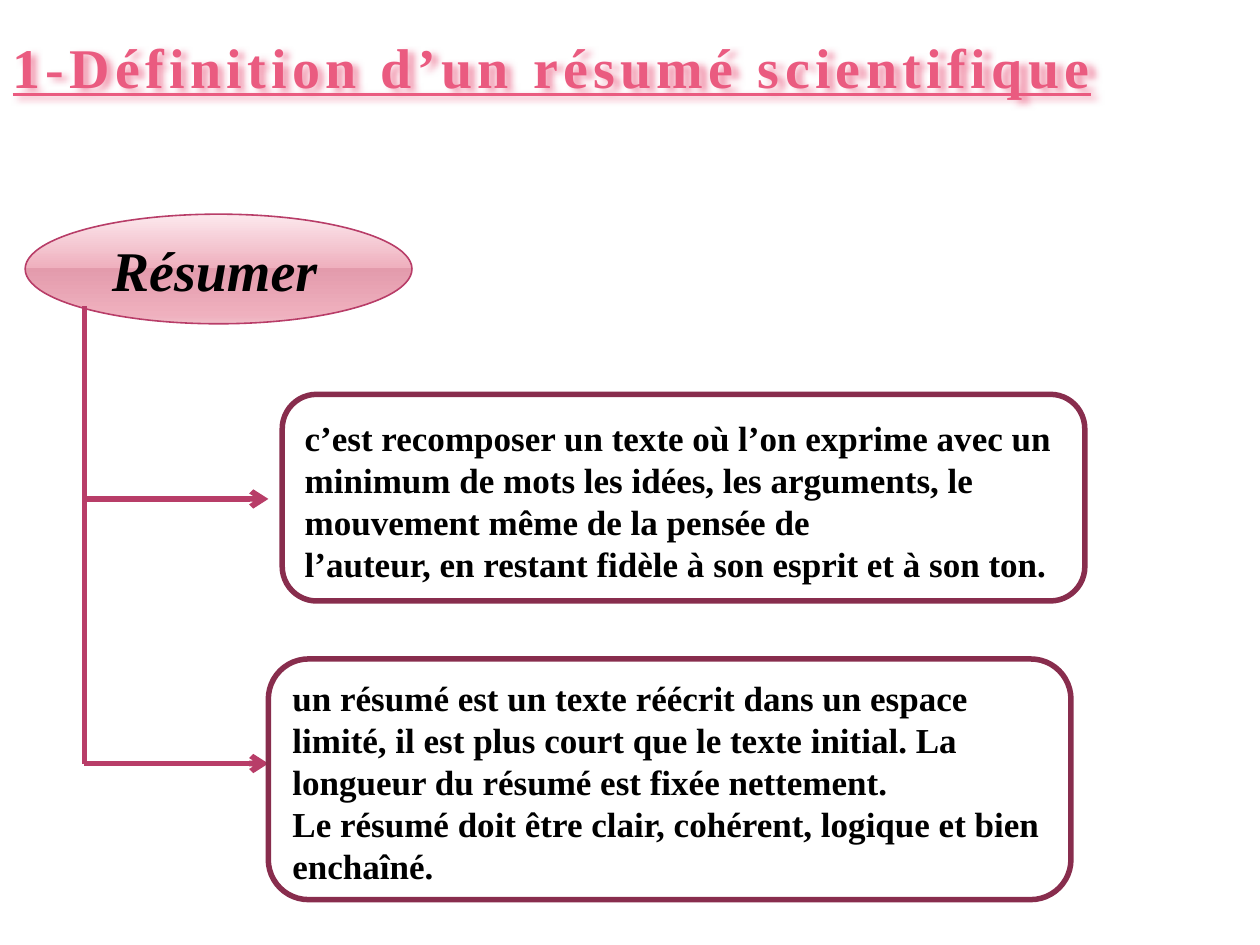
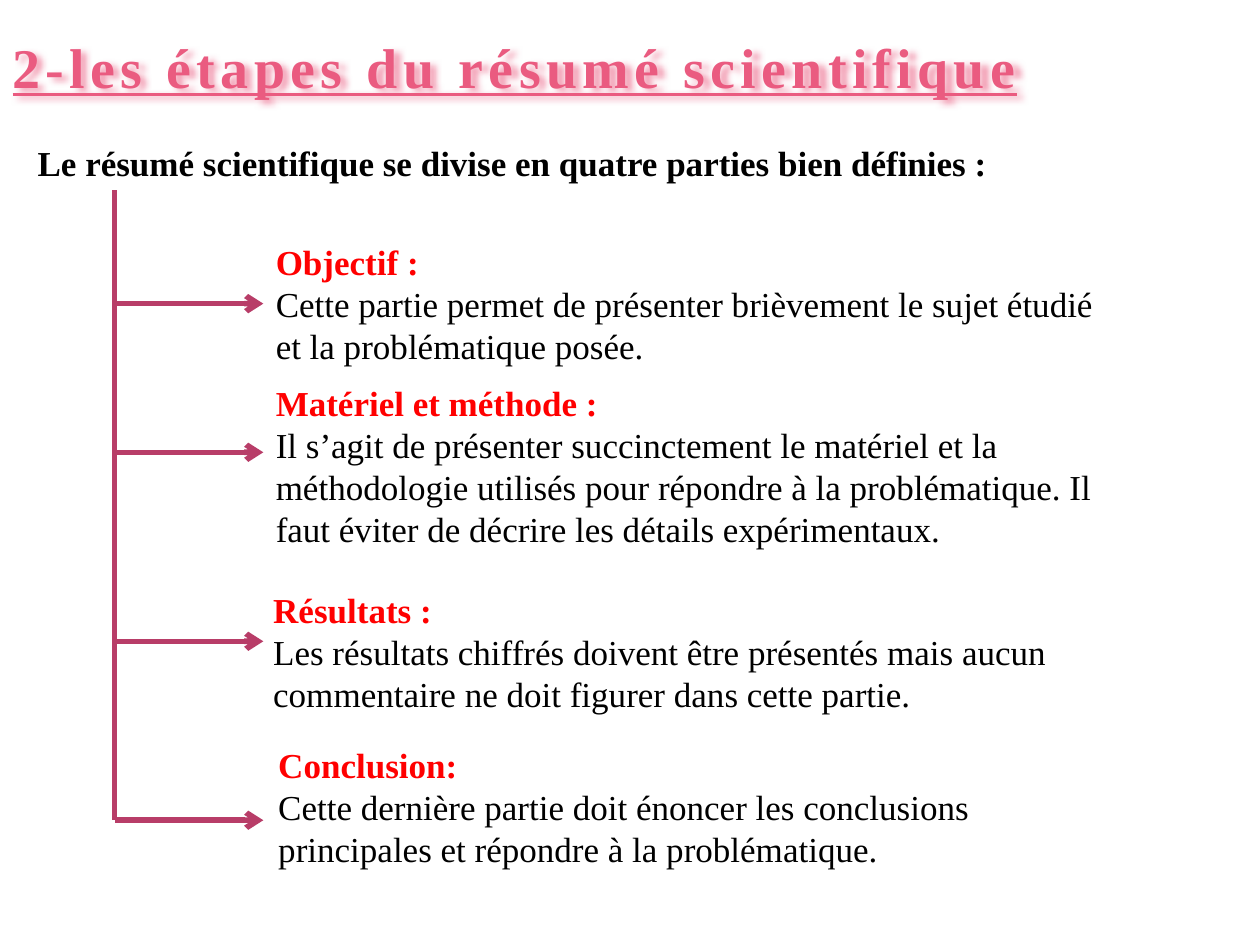
from dataclasses import dataclass

from lxml.etree import SubElement
from pptx import Presentation
from pptx.dml.color import RGBColor
from pptx.enum.shapes import MSO_CONNECTOR, MSO_SHAPE
from pptx.enum.text import MSO_ANCHOR, MSO_AUTO_SIZE, PP_ALIGN
from pptx.oxml.ns import qn
from pptx.util import Inches, Pt


@dataclass(frozen=True)
class Theme:
    font: str = "Times New Roman"
    title: str = "EA5B80"
    heading: str = "FF0000"
    body: str = "000000"
    branch: str = "B83D68"
    frame: str = "882D4D"
    gloss: tuple = ((0, "FCE8ED"), (49, "EFB0BE"), (49, "E39BAC"),
                    (92, "EFB0BE"), (100, "F0BEC9"))
    title_size: int = 32
    body_size: int = 20
    title_spacing: int = 3
    thin: float = 0.9
    thick: float = 3.15


class Deck:
    def __init__(self, theme):
        self.theme = theme
        self.presentation = Presentation()
        self.presentation.slide_width = Inches(10)
        self.presentation.slide_height = Inches(7.5)
        self.slide = None

    def style(self, paragraph, size, color, bold=True, italic=False):
        for run in paragraph.runs:
            run.font.name = self.theme.font
            run.font.size = Pt(size)
            run.font.bold = bold
            run.font.italic = italic
            run.font.color.rgb = RGBColor.from_string(color)

    def outline(self, line, color, width):
        line.color.rgb = RGBColor.from_string(color)
        line.width = Pt(width)

    def new_slide(self, heading, width):
        theme = self.theme
        self.slide = self.presentation.slides.add_slide(self.presentation.slide_layouts[5])
        title = self.slide.shapes.title
        title.left, title.top = Inches(0), Inches(0.21)
        title.width, title.height = Inches(width), Inches(0.64)
        frame = title.text_frame
        frame.text = heading
        frame.word_wrap = False
        frame.auto_size = MSO_AUTO_SIZE.SHAPE_TO_FIT_TEXT
        frame.vertical_anchor = MSO_ANCHOR.TOP
        paragraph = frame.paragraphs[0]
        paragraph.alignment = PP_ALIGN.LEFT
        self.style(paragraph, theme.title_size, theme.title)
        font = paragraph.runs[0].font
        font.underline = True
        font._element.set("spc", str(theme.title_spacing * 100))
        self.soft_shadow(title)

    def soft_shadow(self, shape):
        effects = SubElement(shape._element.spPr, qn("a:effectLst"))
        shadow = SubElement(effects, qn("a:outerShdw"), blurRad=str(Pt(4)),
                            dist=str(Pt(3)), dir="1800000", algn="tl", rotWithShape="0")
        color = SubElement(shadow, qn("a:srgbClr"), val=self.theme.title)
        SubElement(color, qn("a:alpha"), val="60000")

    def shape(self, kind, left, top, width, height, color, weight):
        shape = self.slide.shapes.add_shape(
            kind, Inches(left), Inches(top), Inches(width), Inches(height))
        shape.shadow.inherit = False
        self.outline(shape.line, color, weight)
        shape.text_frame.word_wrap = True
        shape.text_frame.vertical_anchor = MSO_ANCHOR.MIDDLE
        return shape

    def glossy_oval(self, label, left, top, width, height):
        theme = self.theme
        oval = self.shape(MSO_SHAPE.OVAL, left, top, width, height, theme.branch, theme.thin)
        oval.fill.gradient()
        oval.fill.gradient_angle = 270
        stops = oval._element.spPr.find(qn("a:gradFill")).find(qn("a:gsLst"))
        for stop in list(stops):
            stops.remove(stop)
        for position, color in theme.gloss:
            stop = SubElement(stops, qn("a:gs"), pos=str(position * 1000))
            SubElement(stop, qn("a:srgbClr"), val=color)
        frame = oval.text_frame
        frame.margin_right = Inches(0.16)
        frame.text = label
        frame.paragraphs[0].alignment = PP_ALIGN.CENTER
        self.style(frame.paragraphs[0], theme.title_size, theme.body, italic=True)

    def definition(self, sentences, left, top, width, height):
        theme = self.theme
        box = self.shape(MSO_SHAPE.ROUNDED_RECTANGLE, left, top, width, height,
                         theme.frame, theme.thick)
        box.fill.background()
        frame = box.text_frame
        frame.margin_top = Inches(0.09)
        frame.text = "\n".join(sentences)
        for paragraph in frame.paragraphs:
            paragraph.alignment = PP_ALIGN.LEFT
            self.style(paragraph, theme.body_size, theme.body)

    def text(self, lines, left, top, width, height):
        textbox = self.slide.shapes.add_textbox(
            Inches(left), Inches(top), Inches(width), Inches(height))
        frame = textbox.text_frame
        frame.word_wrap = True
        frame.auto_size = MSO_AUTO_SIZE.SHAPE_TO_FIT_TEXT
        frame.text = "\n".join(lines)
        for paragraph in frame.paragraphs:
            self.style(paragraph, self.theme.body_size, self.theme.body)
        return frame.paragraphs

    def step(self, heading, detail, left, top, width, height):
        head, body = self.text([heading, detail], left, top, width, height)
        self.style(head, self.theme.body_size, self.theme.heading)
        self.style(body, self.theme.body_size, self.theme.body, bold=False)

    def line(self, x1, y1, x2, y2, arrow=False):
        connector = self.slide.shapes.add_connector(
            MSO_CONNECTOR.STRAIGHT, Inches(x1), Inches(y1), Inches(x2), Inches(y2))
        self.outline(connector.line, self.theme.branch, self.theme.thick)
        if arrow:
            SubElement(connector.line._ln, qn("a:tailEnd"), type="arrow")
        SubElement(connector._element.spPr, qn("a:effectLst"))

    def tree(self, trunk, top, tip, branches):
        self.line(trunk, top, trunk, branches[-1])
        for branch in branches:
            self.line(trunk, branch, tip, branch, arrow=True)


def definition_slide(deck):
    deck.new_slide("1-Définition d’un résumé scientifique", 8.87)
    deck.glossy_oval("Résumer", 0.2, 1.7, 3.07, 0.87)
    deck.definition([
        "c’est recomposer un texte où l’on exprime avec un minimum de mots les idées, "
        "les arguments, le mouvement même de la pensée de",
        "l’auteur, en restant fidèle à son esprit et à son ton.",
    ], 2.24, 3.13, 6.37, 1.64)
    deck.tree(0.67, 2.43, 2.13, [3.96, 6.06])
    deck.definition([
        "un résumé est un texte réécrit dans un espace limité, il est plus court que "
        "le texte initial. La longueur du résumé est fixée nettement.",
        "Le résumé doit être clair, cohérent, logique et bien enchaîné.",
    ], 2.13, 5.23, 6.37, 1.91)


def steps_slide(deck):
    deck.new_slide("2-les étapes du résumé scientifique", 8.28)
    deck.text(["Le résumé scientifique se divise en quatre parties bien définies :"],
              0.2, 1.07, 8.09, 0.44)
    deck.tree(0.91, 1.51, 2.09, [2.41, 3.59, 5.09, 6.51])
    steps = [
        ("Objectif :",
         "Cette partie permet de présenter brièvement le sujet étudié et la "
         "problématique posée.", 2.09, 1.86, 6.72, 1.11),
        ("Matériel et méthode :",
         "Il s’agit de présenter succinctement le matériel et la méthodologie utilisés "
         "pour répondre à la problématique. Il faut éviter de décrire les détails "
         "expérimentaux.", 2.09, 2.98, 6.72, 1.45),
        ("Résultats :",
         "Les résultats chiffrés doivent être présentés mais aucun commentaire ne doit "
         "figurer dans cette partie.", 2.07, 4.62, 6.74, 1.11),
        ("Conclusion:",
         "Cette dernière partie doit énoncer les conclusions principales et répondre à "
         "la problématique.", 2.11, 5.85, 6.51, 1.11),
    ]
    for step in steps:
        deck.step(*step)


def main():
    deck = Deck(Theme())
    definition_slide(deck)
    steps_slide(deck)
    deck.presentation.save("out.pptx")


if __name__ == "__main__":
    main()
